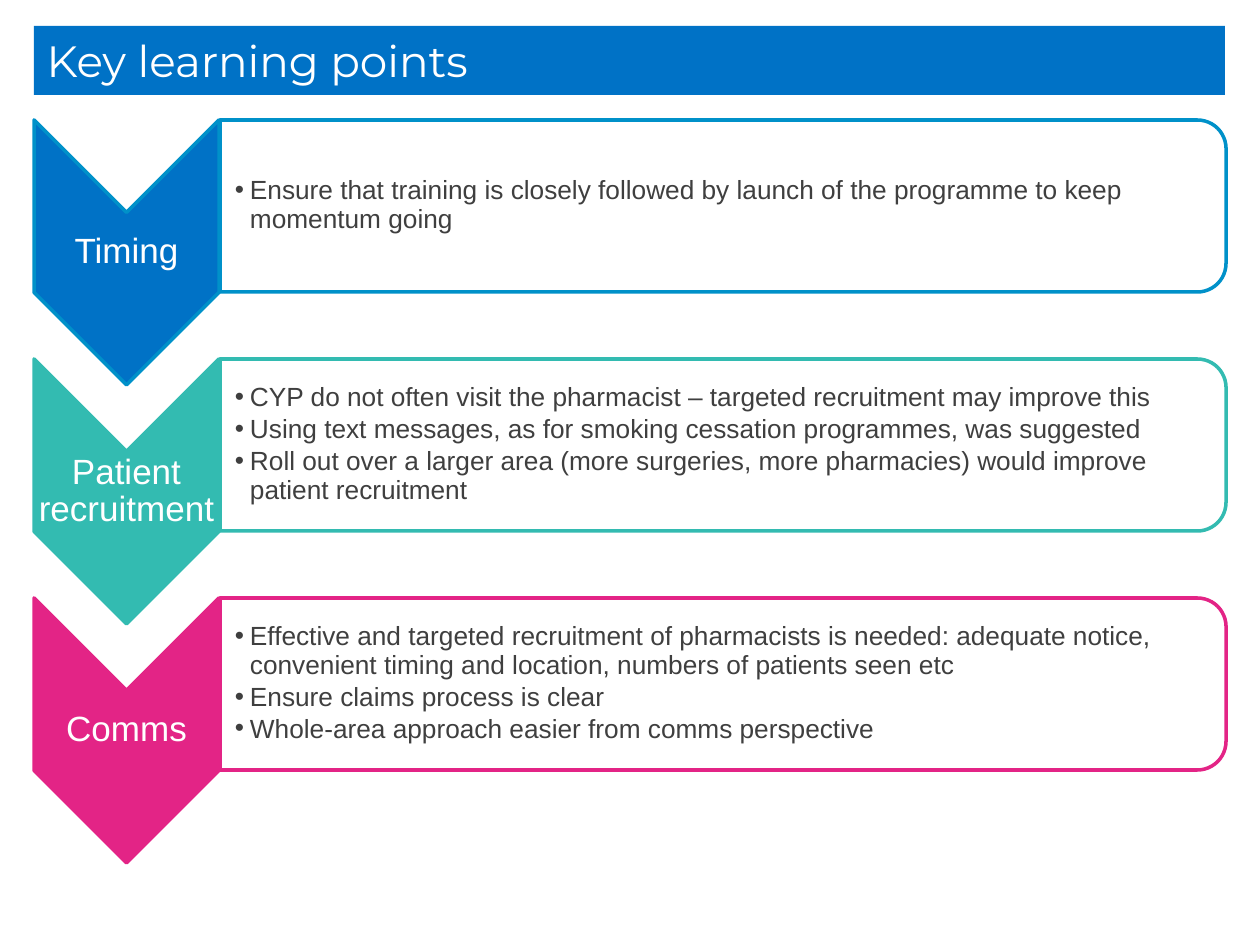
from lxml.etree import SubElement
from pptx import Presentation
from pptx.dml.color import RGBColor
from pptx.enum.shapes import MSO_SHAPE as Preset
from pptx.enum.text import MSO_ANCHOR as Anchor, MSO_AUTO_SIZE as AutoSize, PP_ALIGN as Align
from pptx.oxml.ns import qn
from pptx.util import Emu, Pt

WHITE = RGBColor(0xFF, 0xFF, 0xFF)
GREY = RGBColor(0x3F, 0x3F, 0x3F)
BLUE = RGBColor(0x00, 0x72, 0xC6)
LIGHT_BLUE = RGBColor(0x00, 0x91, 0xC9)
TEAL = RGBColor(0x33, 0xBB, 0xB1)
PINK = RGBColor(0xE3, 0x24, 0x86)

ROW_TOP, ROW_PITCH = 120, 239
LEFT, PANEL_LEFT = 34, 220
INDENT = 15

TOPICS = [
    ("Timing", BLUE, LIGHT_BLUE, [
        "Ensure that training is closely followed by launch of the programme to keep momentum going",
    ]),
    ("Patient recruitment", TEAL, TEAL, [
        "CYP do not often visit the pharmacist – targeted recruitment may improve this",
        "Using text messages, as for smoking cessation programmes, was suggested",
        "Roll out over a larger area (more surgeries, more pharmacies) would improve patient recruitment",
    ]),
    ("Comms", PINK, PINK, [
        "Effective and targeted recruitment of pharmacists is needed: adequate notice, "
        "convenient timing and location, numbers of patients seen etc",
        "Ensure claims process is clear",
        "Whole-area approach easier from comms perspective",
    ]),
]


def px(length):
    return Emu(round(length * 914400 / 126))


def place(shape, left, top, width, height):
    shape.left, shape.top = px(left), px(top)
    shape.width, shape.height = px(width), px(height)


def set_font(paragraph, name, size, color):
    font = paragraph.font
    font.name, font.size, font.bold = name, Pt(size), False
    font.color.rgb = color


def set_frame(frame, left_inset):
    frame.word_wrap = True
    frame.auto_size = AutoSize.NONE
    frame.vertical_anchor = Anchor.MIDDLE
    frame.margin_left = px(left_inset)
    frame.margin_top = frame.margin_right = frame.margin_bottom = px(1)


def add_title(title, text):
    place(title, LEFT, 26, 1191, 69)
    title.fill.solid()
    title.fill.fore_color.rgb = BLUE
    title.text_frame.text = text
    title.text_frame.auto_size = AutoSize.NONE
    title.text_frame.vertical_anchor = Anchor.MIDDLE
    heading = title.text_frame.paragraphs[0]
    heading.alignment = Align.LEFT
    set_font(heading, "Montserrat", 25, WHITE)


def add_turned(slide, preset, left, top, width, height, fill, line):
    """Add a preset turned by 90 degrees that covers the given box once turned."""
    shape = slide.shapes.add_shape(preset, 0, 0, 0, 0)
    place(shape, left + (width - height) / 2, top + (height - width) / 2, height, width)
    shape.rotation = 90
    shape.shadow.inherit = False
    shape.fill.solid()
    shape.fill.fore_color.rgb = fill
    shape.line.color.rgb = line
    shape.line.width = Pt(2)
    return shape


def add_panel(slide, top, line):
    panel = add_turned(slide, Preset.ROUND_2_SAME_RECTANGLE, PANEL_LEFT, top, 1006, 172, WHITE, line)
    white = panel.fill._xPr.find(qn("a:solidFill"))[0]
    SubElement(white, qn("a:alpha"), val="90000")


def add_label(slide, top, text):
    label = slide.shapes.add_textbox(0, 0, 0, 0)
    place(label, LEFT, top, 185, 79)
    set_frame(label.text_frame, 1)
    label.text_frame.text = text
    name = label.text_frame.paragraphs[0]
    name.alignment = Align.CENTER
    name.line_spacing = 0.9
    set_font(name, "Arial", 20, WHITE)


def fill_list(slide, body, top, points):
    slide.shapes._spTree.append(body._element)
    place(body, PANEL_LEFT, top, 997, 155)
    frame = body.text_frame
    set_frame(frame, INDENT)
    frame.text = "\n".join(points)
    for point in frame.paragraphs:
        point.level = 1
        properties = point._p.get_or_add_pPr()
        properties.set("marL", str(px(INDENT)))
        properties.set("indent", str(-px(INDENT)))
        SubElement(properties, qn("a:buChar"), char="•")
        point.alignment = Align.LEFT
        point.line_spacing = 0.9
        point.space_before = Pt(0)
        point.space_after = Pt(2)
        set_font(point, "Arial", 15, GREY)


def main():
    deck = Presentation()
    deck.slide_width, deck.slide_height = px(1260), px(945)
    slide = deck.slides.add_slide(deck.slide_layouts.get_by_name("Comparison"))
    title, *bodies, spare = slide.placeholders
    spare._element.getparent().remove(spare._element)
    add_title(title, "Key learning points")
    for row, (body, (name, fill, line, points)) in enumerate(zip(bodies, TOPICS)):
        top = ROW_TOP + row * ROW_PITCH
        add_turned(slide, Preset.CHEVRON, LEFT, top, 185, 265, fill, line)
        add_label(slide, top + 93, name)
        add_panel(slide, top, line)
        fill_list(slide, body, top + 8, points)
    deck.save("out.pptx")


if __name__ == "__main__":
    main()
